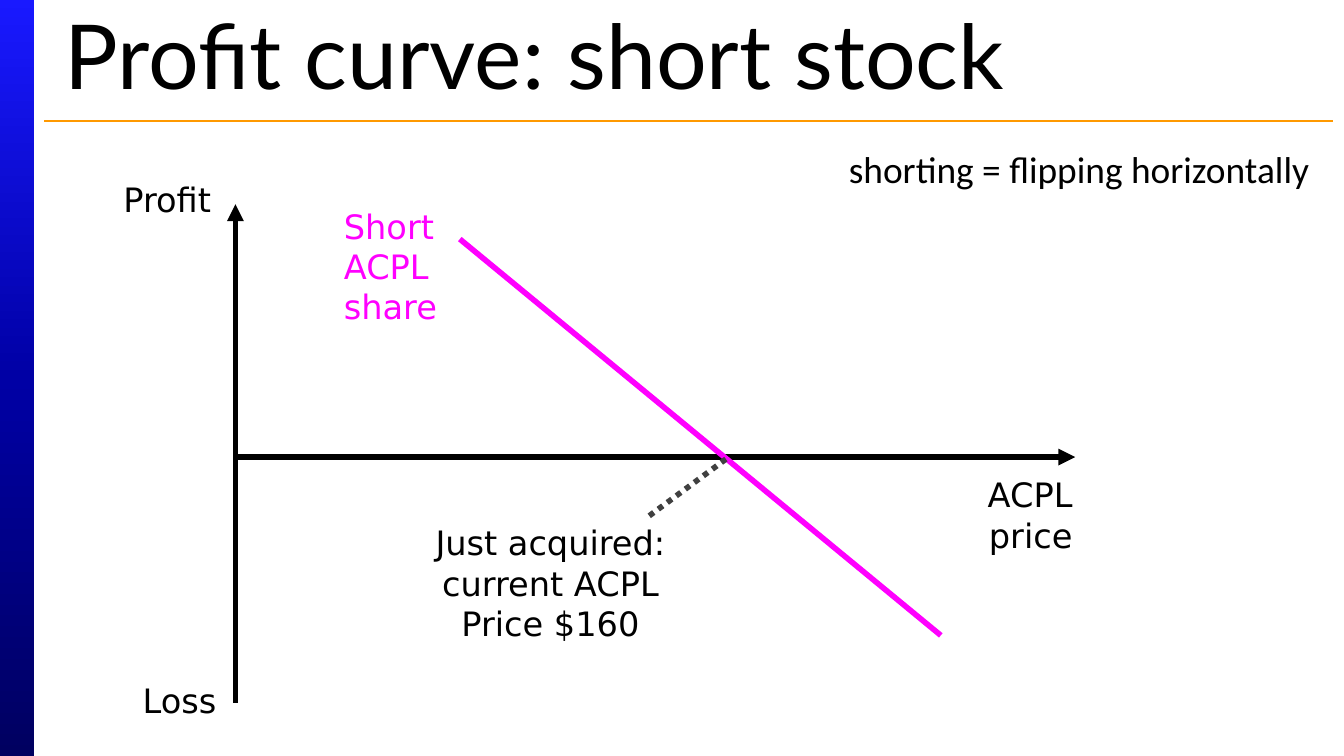
from copy import deepcopy
from dataclasses import dataclass
from typing import Optional

from lxml import etree
from pptx import Presentation
from pptx.dml.color import RGBColor
from pptx.enum.dml import MSO_LINE
from pptx.enum.shapes import MSO_CONNECTOR, MSO_SHAPE
from pptx.enum.text import MSO_ANCHOR, MSO_AUTO_SIZE, PP_ALIGN
from pptx.oxml.ns import qn
from pptx.util import Cm, Pt

LEFT, CENTER, RIGHT = PP_ALIGN.LEFT, PP_ALIGN.CENTER, PP_ALIGN.RIGHT
TOP, MIDDLE = MSO_ANCHOR.TOP, MSO_ANCHOR.MIDDLE
NO_FIT = MSO_AUTO_SIZE.NONE
STRAIGHT = MSO_CONNECTOR.STRAIGHT
RECT = MSO_SHAPE.RECTANGLE
DOTS = MSO_LINE.ROUND_DOT
TITLE_ONLY = 5


@dataclass(frozen=True)
class Theme:
    black: str = "000000"
    white: str = "FFFFFF"
    payoff: str = "FF00FF"
    pointer: str = "404040"
    rule: str = "FF9900"
    bar: tuple = ((0, "1919FF"), (0.5, "0000A5"), (1, "000060"))
    title_font: str = "Lato"
    label_font: str = "DejaVu Sans"
    note_font: str = "Calibri"
    title_size: int = 48
    label_size: int = 18
    note_size: int = 20
    thin: float = 0.75
    thick: float = 3


THEME = Theme()


@dataclass(frozen=True)
class Label:
    text: str
    box: tuple
    align: PP_ALIGN = RIGHT
    color: str = THEME.black


@dataclass(frozen=True)
class Line:
    start: tuple
    end: tuple
    color: str = THEME.black
    width: float = THEME.thick
    dash: Optional[MSO_LINE] = None
    arrow: bool = False


WIDTH, HEIGHT = 25.4, 14.29
AXIS_X, AXIS_Y = 4.45, 8.64

LINES = [
    Line((0.84, 2.29), (25.2, 2.29), THEME.rule, THEME.thin),
    Line((AXIS_X, 13.28), (AXIS_X, 3.86), arrow=True),
    Line((AXIS_X, AXIS_Y), (20.32, AXIS_Y), arrow=True),
    Line((8.69, 4.52), (17.78, 12.01), THEME.payoff),
    Line((12.27, 9.75), (13.77, AXIS_Y), THEME.pointer, dash=DOTS),
]

LABELS = [
    Label("ACPL price", (17.78, 8.84, 2.74, 1.8)),
    Label("Short\nACPL share", (6.25, 3.76, 3.81, 2.57), LEFT, THEME.payoff),
    Label("Just acquired: current ACPL Price $160", (7.65, 9.75, 5.51, 2.57), CENTER),
    Label("Profit", (1.27, 3.25, 2.97, 1.02)),
    Label("Loss", (1.37, 12.73, 2.97, 1.02)),
]


def rgb(color: str) -> RGBColor:
    return RGBColor.from_string(color)


def lengths(box: tuple) -> list:
    return [Cm(v) for v in box]


def set_text(tf, text: str, *, font: str, size: float, color: str = THEME.black,
             align: PP_ALIGN = LEFT, anchor: MSO_ANCHOR = TOP) -> None:
    tf.text = text
    tf.word_wrap = True
    tf.auto_size = NO_FIT
    tf.vertical_anchor = anchor
    for p in tf.paragraphs:
        p.alignment = align
        for r in p.runs:
            r.font.name = font
            r.font.size = Pt(size)
            r.font.color.rgb = rgb(color)


def add_rect(slide, box: tuple):
    sp = slide.shapes.add_shape(RECT, *lengths(box))
    sp.shadow.inherit = False
    sp.line.fill.background()
    return sp


def add_bar(slide) -> None:
    fill = add_rect(slide, (0, 0, 0.64, HEIGHT)).fill
    fill.gradient()
    fill.gradient_angle = 270
    last = fill.gradient_stops[1]._gs
    last.addnext(deepcopy(last))
    for stop, (position, color) in zip(fill.gradient_stops, THEME.bar):
        stop.position = position
        stop.color.rgb = rgb(color)


def add_line(slide, line: Line) -> None:
    cxn = slide.shapes.add_connector(STRAIGHT, *lengths(line.start + line.end))
    cxn.line.color.rgb = rgb(line.color)
    cxn.line.width = Pt(line.width)
    if line.dash is not None:
        cxn.line.dash_style = line.dash
    if line.arrow:
        etree.SubElement(cxn.line._get_or_add_ln(), qn("a:tailEnd"), type="triangle")
    etree.SubElement(cxn._element.spPr, qn("a:effectLst"))


def add_label(slide, label: Label) -> None:
    tf = slide.shapes.add_textbox(*lengths(label.box)).text_frame
    set_text(tf, label.text, font=THEME.label_font, size=THEME.label_size,
             color=label.color, align=label.align)


def add_title(slide, text: str) -> None:
    title = slide.shapes.title
    title.left, title.top, title.width, title.height = lengths((0.97, 0.38, 24.33, 1.27))
    set_text(title.text_frame, text, font=THEME.title_font, size=THEME.title_size,
             anchor=MIDDLE)


def add_note(slide, text: str) -> None:
    sp = add_rect(slide, (15.04, 2.62, 9.96, 1.14))
    sp.fill.solid()
    sp.fill.fore_color.rgb = rgb(THEME.white)
    set_text(sp.text_frame, text, font=THEME.note_font, size=THEME.note_size,
             align=RIGHT, anchor=MIDDLE)


def main() -> None:
    prs = Presentation()
    prs.slide_width, prs.slide_height = lengths((WIDTH, HEIGHT))
    slide = prs.slides.add_slide(prs.slide_layouts[TITLE_ONLY])
    add_bar(slide)
    add_title(slide, "Profit curve: short stock")
    for line in LINES:
        add_line(slide, line)
    for label in LABELS:
        add_label(slide, label)
    add_note(slide, "shorting = flipping horizontally")
    prs.save("out.pptx")


if __name__ == "__main__":
    main()
